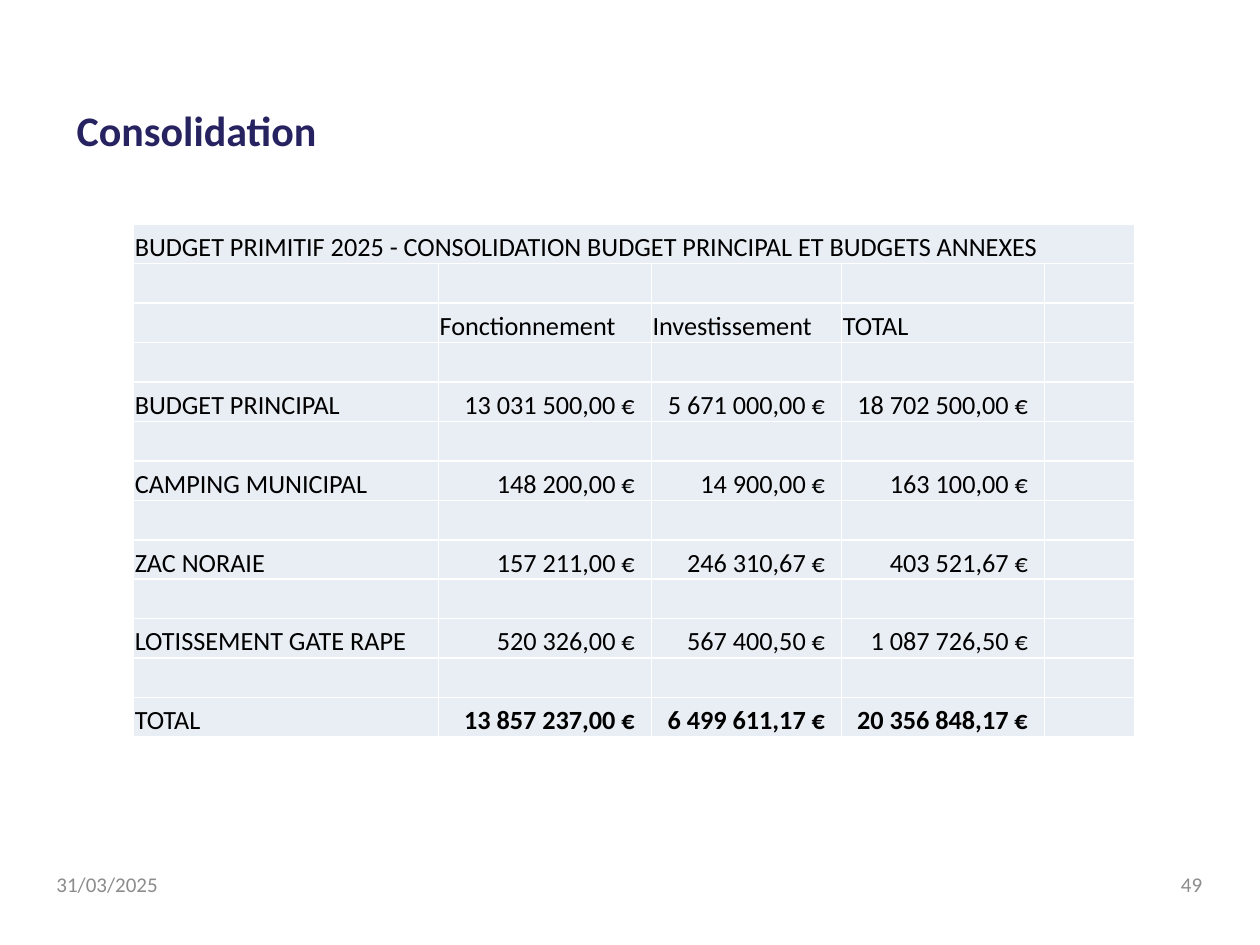
from lxml import etree
from pptx import Presentation
from pptx import util as u
from pptx.dml.color import RGBColor
from pptx.enum import text
from pptx.oxml.ns import qn

FONT = "Calibri"
COLORS = {"title": "272360", "ink": "000000", "cell": "E9EDF4",
          "border": "FFFFFF", "footer": "8C8C8C"}
HEADING = "BUDGET PRIMITIF 2025 - CONSOLIDATION BUDGET PRINCIPAL ET BUDGETS ANNEXES"
HEADERS = ("", "Fonctionnement", "Investissement", "TOTAL")
BUDGETS = [
    ("BUDGET PRINCIPAL", "13 031 500,00 €", "5 671 000,00 €", "18 702 500,00 €"),
    ("CAMPING MUNICIPAL", "148 200,00 €", "14 900,00 €", "163 100,00 €"),
    ("ZAC NORAIE", "157 211,00 €", "246 310,67 €", "403 521,67 €"),
    ("LOTISSEMENT GATE RAPE", "520 326,00 €", "567 400,50 €", "1 087 726,50 €"),
    ("TOTAL", "13 857 237,00 €", "6 499 611,17 €", "20 356 848,17 €"),
]
COL_WIDTHS = (2.42, 1.69, 1.51, 1.61, 0.72)
LEFT, RIGHT = text.PP_ALIGN.LEFT, text.PP_ALIGN.RIGHT
TEXTS = [
    ("Consolidation", (0.51, 0.76, 8.19, 0.47), 24, "title", True, LEFT, (0.07, 0)),
    ("31/03/2025", (0.35, 6.82, 2.33, 0.4), 12, "footer", False, LEFT, (0.05, 0.05)),
    ("49", (7.31, 6.82, 2.33, 0.4), 12, "footer", False, RIGHT, (0.05, 0.05)),
]


def style(p, size, color, bold=False, align=LEFT):
    p.alignment = align
    p.font.name = FONT
    p.font.size = u.Pt(size)
    p.font.bold = bold
    p.font.color.rgb = RGBColor.from_string(COLORS[color])


def add_text(s, words, box, size, color, bold, align, margins):
    tf = s.shapes.add_textbox(*map(u.Inches, box)).text_frame
    tf.word_wrap = True
    tf.vertical_anchor = text.MSO_ANCHOR.MIDDLE
    tf.margin_top, tf.margin_bottom = map(u.Inches, margins)
    tf.text = words
    style(tf.paragraphs[0], size, color, bold, align)


def add_borders(cell):
    tc_pr = cell._tc.get_or_add_tcPr()
    for side in ("lnL", "lnR", "lnT", "lnB"):
        ln = etree.SubElement(tc_pr, qn("a:" + side), w=str(u.Pt(1)))
        fill = etree.SubElement(ln, qn("a:solidFill"))
        etree.SubElement(fill, qn("a:srgbClr"), val=COLORS["border"])


def fill_cell(cell, words, amount, bold):
    cell.margin_left = u.Inches(0.01)
    cell.margin_right = u.Inches(0.13 if amount else 0.01)
    cell.margin_top, cell.margin_bottom = u.Inches(0.01), 0
    cell.vertical_anchor = text.MSO_ANCHOR.BOTTOM
    add_borders(cell)
    cell.fill.solid()
    cell.fill.fore_color.rgb = RGBColor.from_string(COLORS["cell"])
    cell.text = words
    style(cell.text_frame.paragraphs[0], 15, "ink", bold, RIGHT if amount else LEFT)


def add_budget_table(s):
    rows = [(HEADING,)]
    for row in [HEADERS] + BUDGETS:
        rows += [(), row]
    table = s.shapes.add_table(
        len(rows), len(COL_WIDTHS), u.Inches(1.06), u.Inches(1.78),
        u.Inches(sum(COL_WIDTHS)), u.Inches(4.07)).table
    table.first_row = table.horz_banding = False
    for column, width in zip(table.columns, COL_WIDTHS):
        column.width = u.Inches(width)
    for i, row in enumerate(rows):
        for j in range(len(COL_WIDTHS)):
            words = row[j] if j < len(row) else ""
            amount = words.endswith("€")
            fill_cell(table.cell(i, j), words, amount, amount and row is BUDGETS[-1])
    table.cell(0, 0).merge(table.cell(0, len(COL_WIDTHS) - 1))


def main():
    prs = Presentation()
    prs.slide_width, prs.slide_height = u.Inches(10), u.Inches(7.5)
    s = prs.slides.add_slide(prs.slide_layouts[6])
    add_budget_table(s)
    for item in TEXTS:
        add_text(s, *item)
    prs.save("out.pptx")


if __name__ == "__main__":
    main()
